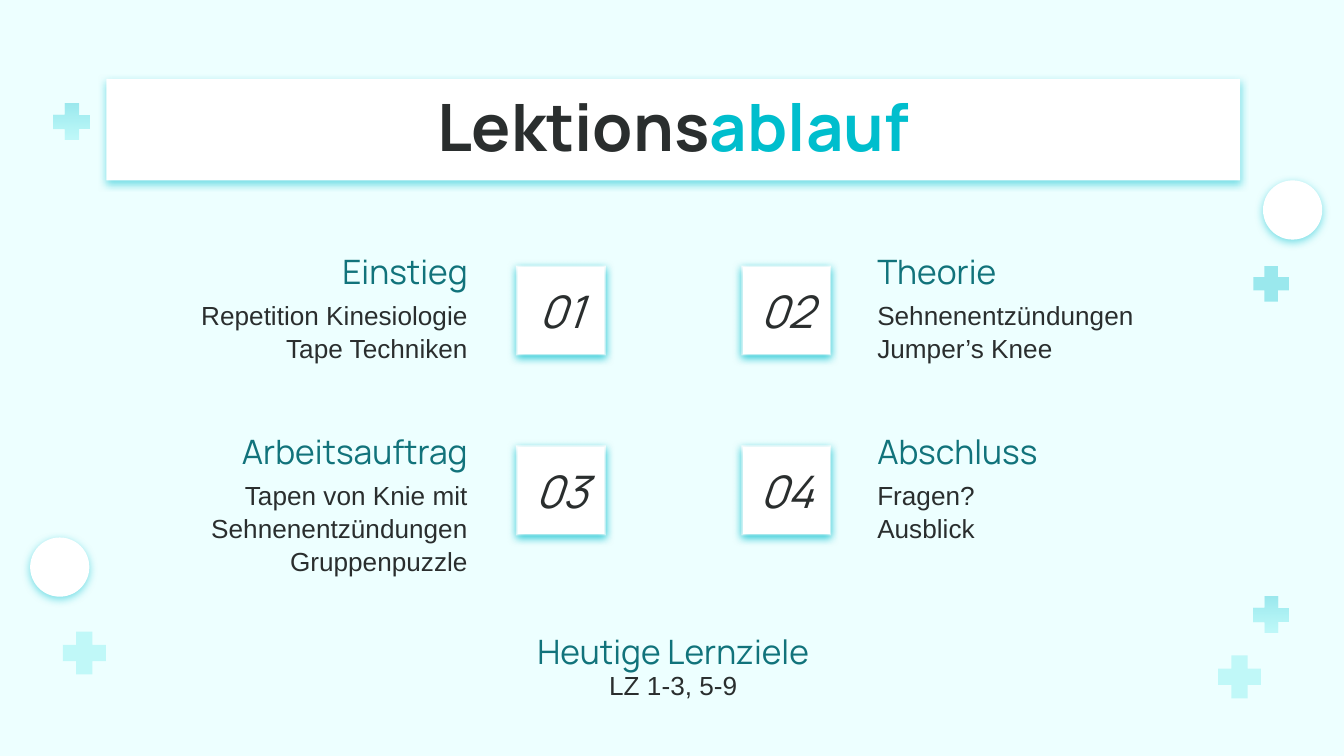
"""Build the lesson agenda slide with four numbered steps."""
from dataclasses import dataclass

from pptx import Presentation, oxml, util as u
from pptx.dml import color
from pptx.enum import shapes, text
from pptx.oxml import ns


@dataclass(frozen=True)
class Theme:
    background: str = "EDFFFF"
    panel: str = "FFFFFF"
    ink: str = "2A2E2E"
    heading: str = "11737B"
    accent: str = "00BECD"
    pale: str = "00DBDE"
    display_font: str = "Manrope"
    body_font: str = "Arial"
    title_size: int = 35
    number_size: int = 24
    heading_size: int = 18
    body_size: int = 14


THEME = Theme()
LEFT, CENTER, RIGHT = text.PP_ALIGN.LEFT, text.PP_ALIGN.CENTER, text.PP_ALIGN.RIGHT
TOP, MIDDLE, BOTTOM = text.MSO_ANCHOR.TOP, text.MSO_ANCHOR.MIDDLE, text.MSO_ANCHOR.BOTTOM
ACCENT_TINT, PALE_TINT = (THEME.accent, 35), (THEME.pale, 19)

CROSSES = [
    (23.02, 12.39, 0.81, [PALE_TINT]),
    (1.02, 1.96, 0.68, [ACCENT_TINT, PALE_TINT]),
    (23.69, 11.28, 0.67, [ACCENT_TINT, PALE_TINT]),
    (1.19, 11.94, 0.81, [PALE_TINT]),
    (23.69, 5.03, 0.67, [ACCENT_TINT]),
]
CIRCLES = [(0.57, 10.16), (23.87, 3.41)]
STEPS = [
    ("Einstieg", ["Repetition Kinesiologie Tape Techniken"]),
    ("Theorie", ["Sehnenentzündungen", "Jumper’s Knee"]),
    ("Arbeitsauftrag", ["Tapen von Knie mit Sehnenentzündungen", "Gruppenpuzzle"]),
    ("Abschluss", ["Fragen?", "Ausblick"]),
]
COLUMNS = [(2.77, 9.75, RIGHT), (16.33, 14.01, LEFT)]
ROW_TOP, ROW_PITCH = 4.29, 3.4


def rgb(value):
    """Turn a hex string into a colour."""
    return color.RGBColor.from_string(value)


def box(left, top, width, height):
    """Convert a frame in centimetres to lengths."""
    return [u.Cm(value) for value in (left, top, width, height)]


def display(content, size, ink, **style):
    """Describe a run in the display font."""
    return content, THEME.display_font, size, ink, style


def body(content):
    """Describe a run of body text."""
    return content, THEME.body_font, THEME.body_size, THEME.ink, {}


def write(shape, paragraphs, align, anchor=TOP, spacing=1.0):
    """Fill a shape with paragraphs, each a list of run descriptions."""
    frame = shape.text_frame
    frame.word_wrap = True
    frame.vertical_anchor = anchor
    frame.margin_left = frame.margin_right = u.Cm(0.25)
    frame.margin_top = frame.margin_bottom = u.Cm(0.25)
    for index, runs in enumerate(paragraphs):
        paragraph = frame.add_paragraph() if index else frame.paragraphs[0]
        paragraph.alignment = align
        paragraph.line_spacing = spacing
        for content, font_name, size, ink, style in runs:
            run = paragraph.add_run()
            run.text = content
            run.font.name = font_name
            run.font.size = u.Pt(size)
            run.font.color.rgb = rgb(ink)
            run.font.bold = style.get("bold", False)
            run.font.italic = style.get("italic", False)


def add_text(slide, frame, paragraphs, align, **layout):
    """Add a text box."""
    write(slide.shapes.add_textbox(*box(*frame)), paragraphs, align, **layout)


def add_panel(slide, kind, frame):
    """Add a white shape with a soft accent shadow below it."""
    shape = slide.shapes.add_shape(kind, *box(*frame))
    shape.fill.solid()
    shape.fill.fore_color.rgb = rgb(THEME.panel)
    shape.line.fill.background()
    shape.shadow.inherit = False
    effects = shape._element.spPr.find(ns.qn("a:effectLst"))
    effects.append(oxml.parse_xml(
        f'<a:outerShdw {ns.nsdecls("a")} blurRad="{u.Pt(4.5)}" dist="{u.Pt(1.5)}" '
        f'dir="5400000" algn="bl" rotWithShape="0"><a:srgbClr val="{THEME.accent}">'
        '<a:alpha val="50000"/></a:srgbClr></a:outerShdw>'))
    return shape


def add_cross(slide, left, top, size, tints):
    """Add a translucent plus sign, plain or shaded from top to bottom."""
    near, far = 0.31 * size, 0.69 * size
    outline = [(near, 0), (near, near), (0, near), (0, far), (near, far), (near, size),
               (far, size), (far, far), (size, far), (size, near), (far, near), (far, 0)]
    points = [(u.Cm(left + x), u.Cm(top + y)) for x, y in outline]
    builder = slide.shapes.build_freeform(*points[0])
    builder.add_line_segments(points[1:], close=True)
    shape = builder.convert_to_shape()
    shape.shadow.inherit = False
    shape.line.fill.background()
    if len(tints) == 1:
        shape.fill.solid()
        colors = [shape.fill.fore_color]
    else:
        shape.fill.gradient()
        shape.fill.gradient_angle = 270
        colors = [stop.color for stop in shape.fill.gradient_stops]
    for target, (value, _) in zip(colors, tints):
        target.rgb = rgb(value)
    for element, (_, alpha) in zip(shape._element.spPr.iter(ns.qn("a:srgbClr")), tints):
        element.append(oxml.parse_xml(
            f'<a:alpha {ns.nsdecls("a")} val="{alpha * 1000}"/>'))


def add_step(slide, index, heading, lines):
    """Add one numbered step with its heading and details."""
    row, column = divmod(index, 2)
    text_left, tile_left, align = COLUMNS[column]
    top = ROW_TOP + row * ROW_PITCH
    add_text(slide, (text_left, top, 6.32, 1.47),
             [[display(heading, THEME.heading_size, THEME.heading)]], align, anchor=BOTTOM)
    add_text(slide, (text_left, top + 1.1, 6.32, 1.98),
             [[body(line)] for line in lines], align, spacing=1.05)
    rectangle = shapes.MSO_SHAPE.RECTANGLE
    add_panel(slide, rectangle, (tile_left, top + 0.73, 1.7, 1.7))
    tile = add_panel(slide, rectangle, (tile_left + 0.03, top + 0.76, 1.65, 1.65))
    number = display(f"{index + 1:02}", THEME.number_size, THEME.ink, italic=True)
    write(tile, [[number]], CENTER, anchor=MIDDLE)


def main():
    """Build and save the slide."""
    presentation = Presentation()
    presentation.slide_width, presentation.slide_height = u.Cm(25.4), u.Cm(14.29)
    slide = presentation.slides.add_slide(presentation.slide_layouts[6])
    slide.background.fill.solid()
    slide.background.fill.fore_color.rgb = rgb(THEME.background)
    for cross in CROSSES:
        add_cross(slide, *cross)
    for left, top in CIRCLES:
        add_panel(slide, shapes.MSO_SHAPE.OVAL, (left, top, 1.12, 1.12))
    title = add_panel(slide, shapes.MSO_SHAPE.RECTANGLE, (2.01, 1.49, 21.43, 1.92))
    write(title, [[display("Lektions", THEME.title_size, THEME.ink, bold=True),
                   display("ablauf", THEME.title_size, THEME.accent, bold=True)]],
          CENTER, spacing=0.95)
    for index, (heading, lines) in enumerate(STEPS):
        add_step(slide, index, heading, lines)
    add_text(slide, (2.01, 11.73, 21.43, 1.83),
             [[display("Heutige Lernziele", THEME.heading_size, THEME.heading)],
              [body("LZ 1-3, 5-9")]], CENTER, spacing=0.95)
    presentation.save("out.pptx")


if __name__ == "__main__":
    main()
